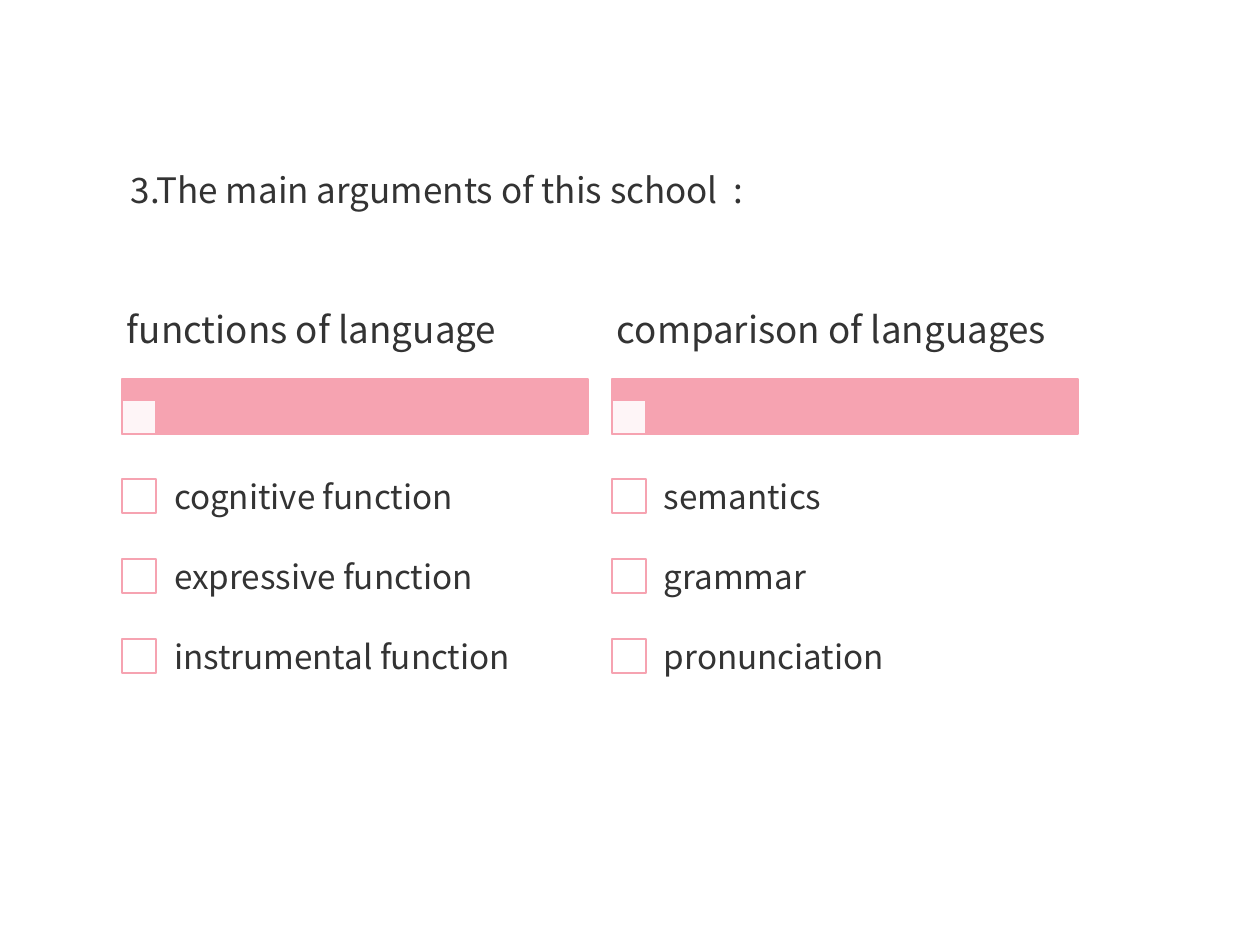
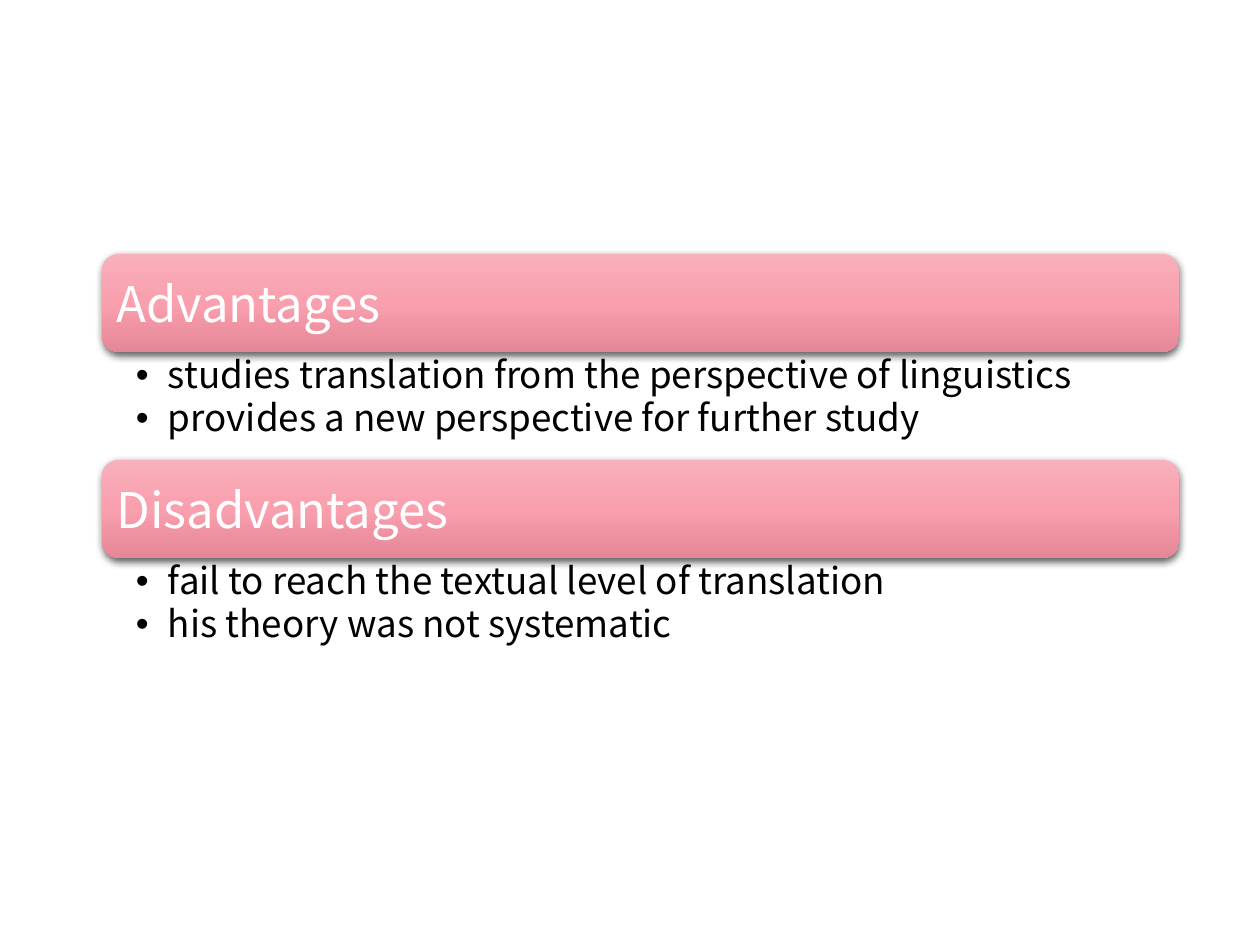
from lxml import etree
from pptx import Presentation
from pptx.dml.color import RGBColor
from pptx.enum.shapes import MSO_SHAPE
from pptx.enum.text import MSO_ANCHOR, MSO_AUTO_SIZE, PP_ALIGN
from pptx.oxml.ns import qn
from pptx.util import Pt

RECT, ROUNDED = MSO_SHAPE.RECTANGLE, MSO_SHAPE.ROUNDED_RECTANGLE
TOP, MIDDLE = MSO_ANCHOR.TOP, MSO_ANCHOR.MIDDLE
LEFT, NO_FIT = PP_ALIGN.LEFT, MSO_AUTO_SIZE.NONE

# Content
TITLE = "3.The main arguments of this school  :"
ARGUMENTS = [
    ("functions of language",
     ["cognitive function", "expressive function", "instrumental function"]),
    ("comparison of languages",
     ["semantics", "grammar", "pronunciation"]),
]
EVALUATION = [
    ("Advantages",
     ["studies translation from the perspective of linguistics",
      "provides a new perspective for further study"]),
    ("Disadvantages",
     ["fail to reach the textual level of translation",
      "his theory was not systematic"]),
]

# Shared style
FONT = "Noto Sans CJK SC"
COLORS = {"pink": "F6A3B1", "white": "FFFFFF", "text": "333333", "black": "000000"}
BAR_GRADIENT = [(0, "F8B0BC"), (50, "FA9FAE"), (100, "E48797")]
PX = 914400 / 126
SLIDE_W, SLIDE_H = 1260, 945

# Layout in px
COLUMN_X, COLUMN_W, COLUMN_STEP = 122, 466, 490
HEADING_Y, HEADING_H = 280, 98
BAND_Y, BAND_H = 379, 55
CHECK, BAND_CHECK_Y = 34, 400
ITEM_Y, ITEM_STEP = 456, 80
PANEL_X, PANEL_Y, PANEL_W, PANEL_STEP = 102, 254, 1077, 206
BAR_H, LIST_H = 98, 108


def px(value):
    return round(value * PX)


def rgb(name):
    return RGBColor.from_string(COLORS[name])


def write(box, lines, size, color, margins, anchor=MIDDLE):
    """Fill a text frame; margins are left, top, right, bottom in px."""
    frame = box.text_frame
    frame.word_wrap = True
    frame.auto_size = NO_FIT
    frame.vertical_anchor = anchor
    (frame.margin_left, frame.margin_top,
     frame.margin_right, frame.margin_bottom) = map(px, margins)
    frame.text = "\n".join(lines)
    for para in frame.paragraphs:
        para.alignment = LEFT
        for span in para.runs:
            span.font.name = FONT
            span.font.size = Pt(size)
            span.font.color.rgb = rgb(color)
    return frame.paragraphs


def add_text(page, area, *style):
    return write(page.shapes.add_textbox(*map(px, area)), *style)


def add_box(page, area, fill):
    box = page.shapes.add_shape(RECT, *map(px, area))
    box.shadow.inherit = False
    box.fill.solid()
    box.fill.fore_color.rgb = rgb(fill)
    box.line.color.rgb = rgb("pink")
    box.line.width = Pt(1)
    return box


def add_color(parent, value, alpha=None):
    color = etree.SubElement(parent, qn("a:srgbClr"), val=value)
    if alpha:
        etree.SubElement(color, qn("a:alpha"), val=str(alpha * 1000))


def add_glossy_bar(page, area):
    bar = page.shapes.add_shape(ROUNDED, *map(px, area))
    bar.line.fill.background()
    bar.fill.gradient()
    bar.fill.gradient_angle = 270
    stops = bar.element.spPr.find(".//" + qn("a:gsLst"))
    stops.clear()
    for position, value in BAR_GRADIENT:
        add_color(etree.SubElement(stops, qn("a:gs"), pos=str(position * 1000)), value)
    bar.shadow.inherit = False
    effects = bar.element.spPr.find(qn("a:effectLst"))
    shadow = etree.SubElement(effects, qn("a:outerShdw"), blurRad=str(Pt(4.5)),
                              dist=str(Pt(1.5)), dir="5400000", rotWithShape="0")
    add_color(shadow, COLORS["black"], 63)
    return bar


def add_bullet(para):
    props = para._p.get_or_add_pPr()
    props.set("marL", str(px(32)))
    props.set("indent", str(px(-32)))
    para.line_spacing = 0.9
    para.space_after = Pt(1.8)
    etree.SubElement(props, qn("a:buFont"), typeface="Arial")
    etree.SubElement(props, qn("a:buChar"), char="•")


def build_arguments(deck):
    page = deck.slides.add_slide(deck.slide_layouts[5])
    title = page.shapes.title
    title.left, title.top, title.width, title.height = map(px, (122, 140, 995, 104))
    write(title, [TITLE], 20, "text", (9, 5, 9, 5))[0].line_spacing = 0.9

    for column, (heading, items) in enumerate(ARGUMENTS):
        x = COLUMN_X + column * COLUMN_STEP
        # Heading and band
        add_box(page, (x, BAND_Y, COLUMN_W, BAND_H), "pink")
        check = add_box(page, (x, BAND_CHECK_Y, CHECK, CHECK), "white")
        color = check.element.spPr.find(qn("a:solidFill"))[0]
        etree.SubElement(color, qn("a:alpha"), val="90000")
        add_text(page, (x, HEADING_Y, COLUMN_W, HEADING_H),
                 [heading], 21, "text", (5, 4, 5, 4))
        # Checklist
        for row, item in enumerate(items):
            y = ITEM_Y + row * ITEM_STEP
            add_box(page, (x, y + (ITEM_STEP - CHECK) // 2, CHECK, CHECK), "white")
            add_text(page, (x + CHECK - 1, y, COLUMN_W - CHECK + 1, ITEM_STEP),
                     [item], 19, "text", (19, 19, 19, 19))


def build_evaluation(deck):
    page = deck.slides.add_slide(deck.slide_layouts[6])
    for index, (heading, points) in enumerate(EVALUATION):
        y = PANEL_Y + index * PANEL_STEP
        bar = add_glossy_bar(page, (PANEL_X, y, PANEL_W, BAR_H))
        write(bar, [heading], 28, "white", (10, 10, 10, 10))
        points_area = (PANEL_X, y + BAR_H, PANEL_W, LIST_H)
        for para in add_text(page, points_area, points, 21, "black", (34, 5, 28, 5), TOP):
            add_bullet(para)


def main():
    deck = Presentation()
    deck.slide_width, deck.slide_height = px(SLIDE_W), px(SLIDE_H)
    build_arguments(deck)
    build_evaluation(deck)
    deck.save("out.pptx")


if __name__ == "__main__":
    main()
